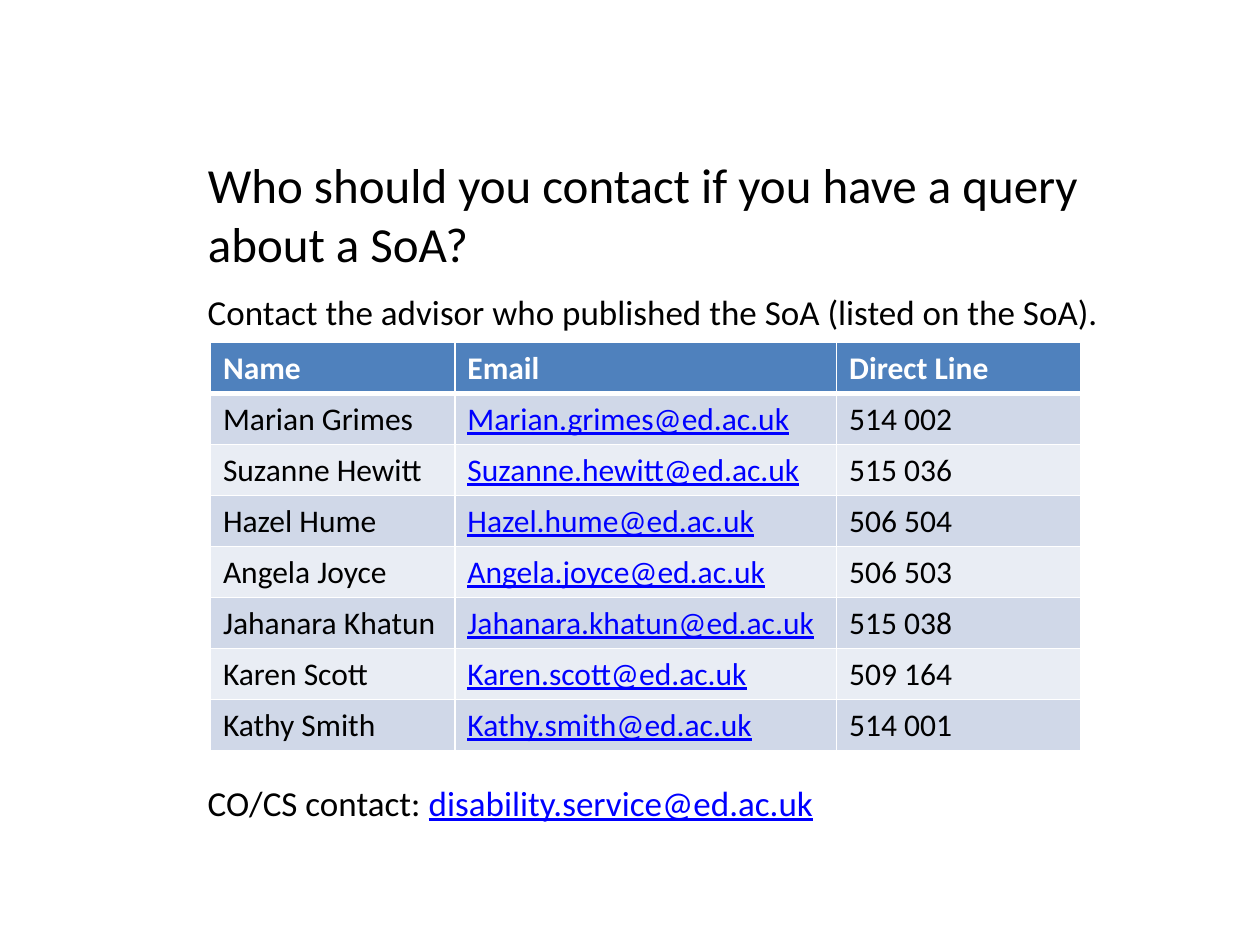
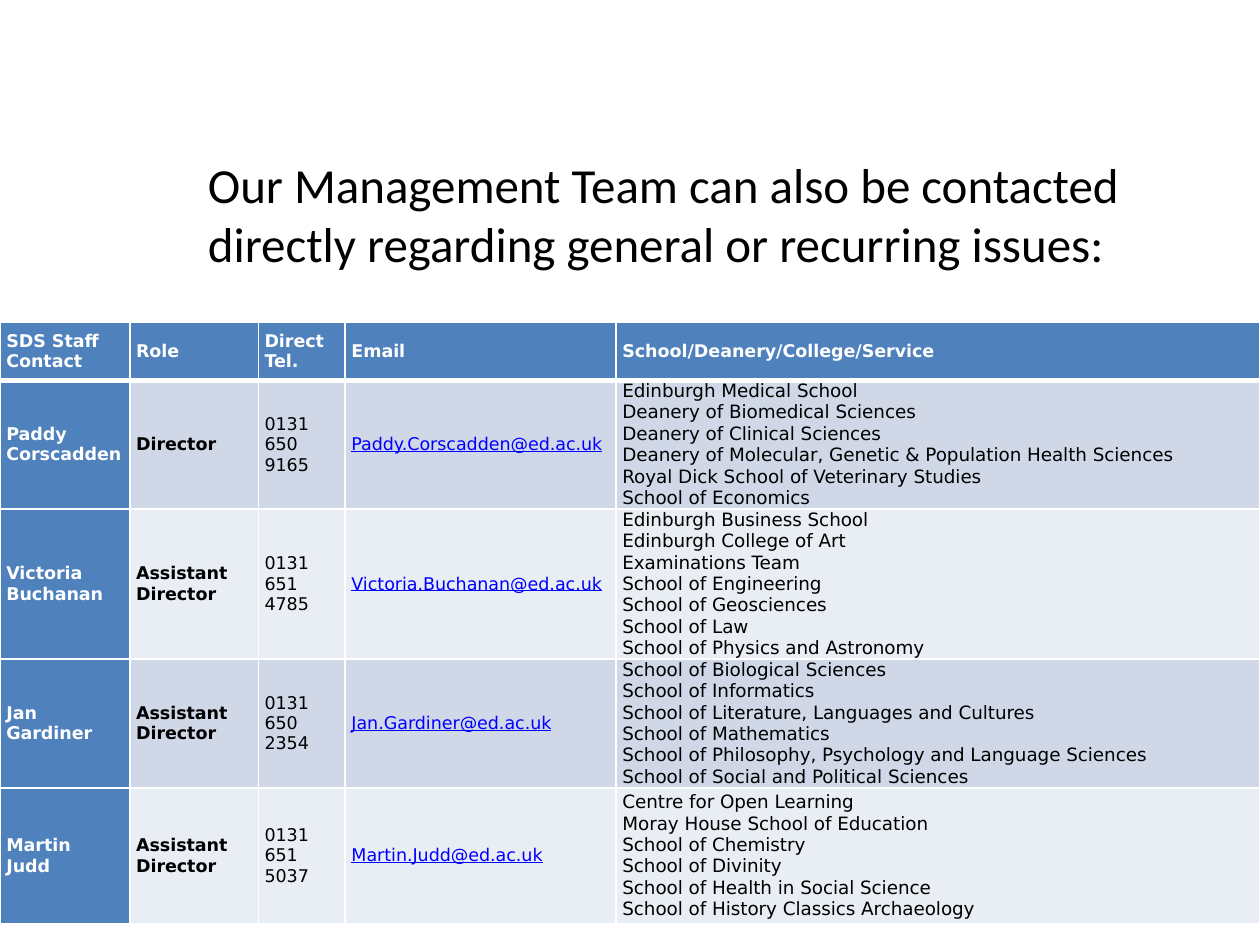
from dataclasses import dataclass

from lxml.etree import SubElement
from pptx import Presentation
from pptx.dml.color import RGBColor
from pptx.enum.text import MSO_ANCHOR, PP_ALIGN
from pptx.oxml.ns import qn
from pptx.util import Inches, Pt


@dataclass(frozen=True)
class Theme:
    text: str = "000000"
    white: str = "FFFFFF"
    link: str = "0000FF"
    accent: str = "4F81BD"
    bands: tuple = ("D0D8E8", "E9EDF4")
    main_font: str = "Calibri"
    dense_font: str = "DejaVu Sans"
    title_size: float = 28
    body_size: float = 20
    advisor_size: float = 18
    manager_size: float = 10
    school_size: float = 10.5
    thin_line: float = 1
    header_line: float = 3


THEME = Theme()
TITLE_ONLY = 5
TEXT_LEFT, TEXT_WIDTH = 1.55, 7.95

ADVISORS = [
    ("Name", "Email", "Direct Line"),
    ("Marian Grimes", "Marian.grimes@ed.ac.uk", "514 002"),
    ("Suzanne Hewitt", "Suzanne.hewitt@ed.ac.uk", "515 036"),
    ("Hazel Hume", "Hazel.hume@ed.ac.uk", "506 504"),
    ("Angela Joyce", "Angela.joyce@ed.ac.uk", "506 503"),
    ("Jahanara Khatun", "Jahanara.khatun@ed.ac.uk", "515 038"),
    ("Karen Scott", "Karen.scott@ed.ac.uk", "509 164"),
    ("Kathy Smith", "Kathy.smith@ed.ac.uk", "514 001"),
]

# A list in a cell holds one paragraph per item.
MANAGERS = [
    ("SDS Staff Contact", "Role", "Direct Tel.", "Email",
     "School/Deanery/College/Service"),
    ("Paddy Corscadden", "Director", "0131 650 9165", "Paddy.Corscadden@ed.ac.uk", [
        "Edinburgh Medical School",
        "Deanery of Biomedical Sciences",
        "Deanery of Clinical Sciences",
        "Deanery of Molecular, Genetic & Population Health Sciences",
        "Royal Dick School of Veterinary Studies",
        "School of Economics"]),
    ("Victoria Buchanan", "Assistant Director", "0131 651 4785",
     "Victoria.Buchanan@ed.ac.uk", [
         "Edinburgh Business School",
         "Edinburgh College of Art",
         "Examinations Team",
         "School of Engineering",
         "School of Geosciences",
         "School of Law",
         "School of Physics and Astronomy"]),
    ("Jan Gardiner", "Assistant Director", "0131 650 2354", "Jan.Gardiner@ed.ac.uk", [
        "School of Biological Sciences",
        "School of Informatics",
        "School of Literature, Languages and Cultures",
        "School of Mathematics",
        "School of Philosophy, Psychology and Language Sciences",
        "School of Social and Political Sciences"]),
    (["Martin", "Judd"], "Assistant Director", "0131 651 5037",
     "Martin.Judd@ed.ac.uk", [
         "Centre for Open Learning",
         "Moray House School of Education",
         "School of Chemistry",
         "School of Divinity",
         "School of Health in Social Science",
         "School of History Classics Archaeology"]),
]


def add_span(para, text, size, font=THEME.main_font, color=THEME.text, bold=False):
    """Add a run; e-mail addresses get the link look."""
    is_email = "@" in text
    span = para.add_run()
    span.text = text
    span.font.name = font
    span.font.size = Pt(size)
    span.font.bold = bold
    span.font.underline = is_email
    span.font.color.rgb = RGBColor.from_string(THEME.link if is_email else color)


def add_titled_page(deck, title):
    page = deck.slides.add_slide(deck.slide_layouts[TITLE_ONLY])
    box = page.shapes.title
    box.left, box.top = Inches(TEXT_LEFT), Inches(1.07)
    box.width, box.height = Inches(TEXT_WIDTH), Inches(1.25)
    box.text_frame.vertical_anchor = MSO_ANCHOR.MIDDLE
    para = box.text_frame.paragraphs[0]
    para.alignment = PP_ALIGN.LEFT
    add_span(para, title, THEME.title_size)
    return page


def add_text_line(page, top, *texts):
    box = page.shapes.add_textbox(Inches(TEXT_LEFT), Inches(top),
                                  Inches(TEXT_WIDTH), Inches(0.44))
    box.text_frame.word_wrap = True
    for text in texts:
        add_span(box.text_frame.paragraphs[0], text, THEME.body_size)


def set_borders(cell, top, bottom):
    """Draw white borders, with top and bottom widths in points."""
    properties = cell._tc.get_or_add_tcPr()
    widths = {"lnL": THEME.thin_line, "lnR": THEME.thin_line, "lnT": top, "lnB": bottom}
    for side, width in widths.items():
        line = SubElement(properties, qn(f"a:{side}"), w=str(Pt(width)))
        fill = SubElement(line, qn("a:solidFill"))
        SubElement(fill, qn("a:srgbClr"), val=THEME.white)


def fill_cell(cell, content, fill, **text_format):
    cell.fill.solid()
    cell.fill.fore_color.rgb = RGBColor.from_string(fill)
    lines = content if isinstance(content, list) else [content]
    for index, line in enumerate(lines):
        frame = cell.text_frame
        para = frame.add_paragraph() if index else frame.paragraphs[0]
        add_span(para, line, **text_format)


def add_staff_table(page, rows, left, top, widths, heights, sizes,
                    font=THEME.main_font, bold_columns=(), accent_columns=(),
                    compact=False):
    """Add a banded table; sizes are the body type sizes by column."""
    frame = page.shapes.add_table(len(rows), len(widths), Inches(left), Inches(top),
                                  Inches(sum(widths)), Inches(sum(heights)))
    table = frame.table
    for column, width in zip(table.columns, widths):
        column.width = Inches(width)
    for row, height in zip(table.rows, heights):
        row.height = Inches(height)
    for r, contents in enumerate(rows):
        for c, content in enumerate(contents):
            cell = table.cell(r, c)
            if compact:
                cell.margin_left = cell.margin_right = Inches(0.05)
                cell.margin_top = cell.margin_bottom = 0
                cell.vertical_anchor = MSO_ANCHOR.MIDDLE
            set_borders(cell,
                        top=THEME.header_line if r == 1 else THEME.thin_line,
                        bottom=THEME.header_line if r == 0 else THEME.thin_line)
            accented = r == 0 or c in accent_columns
            fill_cell(cell, content,
                      fill=THEME.accent if accented else THEME.bands[(r - 1) % 2],
                      size=sizes[0] if r == 0 else sizes[c],
                      font=font,
                      color=THEME.white if accented else THEME.text,
                      bold=r == 0 or c in bold_columns)


def add_advisor_page(deck):
    page = add_titled_page(deck, "Who should you contact if you have a query about a SoA?")
    add_text_line(page, 2.26,
                  "Contact the advisor who published the SoA (listed on the SoA).")
    add_text_line(page, 6.15, "CO/CS contact: ", "disability.service@ed.ac.uk")
    add_staff_table(page, ADVISORS, left=1.67, top=2.72, widths=[1.94, 3.03, 1.94],
                    heights=[3.24 / len(ADVISORS)] * len(ADVISORS),
                    sizes=[THEME.advisor_size] * 3)


def add_manager_page(deck):
    page = add_titled_page(deck, "Our Management Team can also be contacted directly "
                                 "regarding general or recurring issues:")
    add_staff_table(page, MANAGERS, left=0, top=2.56,
                    widths=[1.03, 1.02, 0.69, 2.15, 5.11],
                    heights=[0.46, 1.02, 1.19, 1.02, 1.08],
                    sizes=[THEME.manager_size] * 4 + [THEME.school_size],
                    font=THEME.dense_font, bold_columns=(0, 1), accent_columns=(0,),
                    compact=True)


def main():
    deck = Presentation()
    deck.slide_width, deck.slide_height = Inches(10), Inches(7.5)
    add_advisor_page(deck)
    add_manager_page(deck)
    deck.save("out.pptx")


if __name__ == "__main__":
    main()
